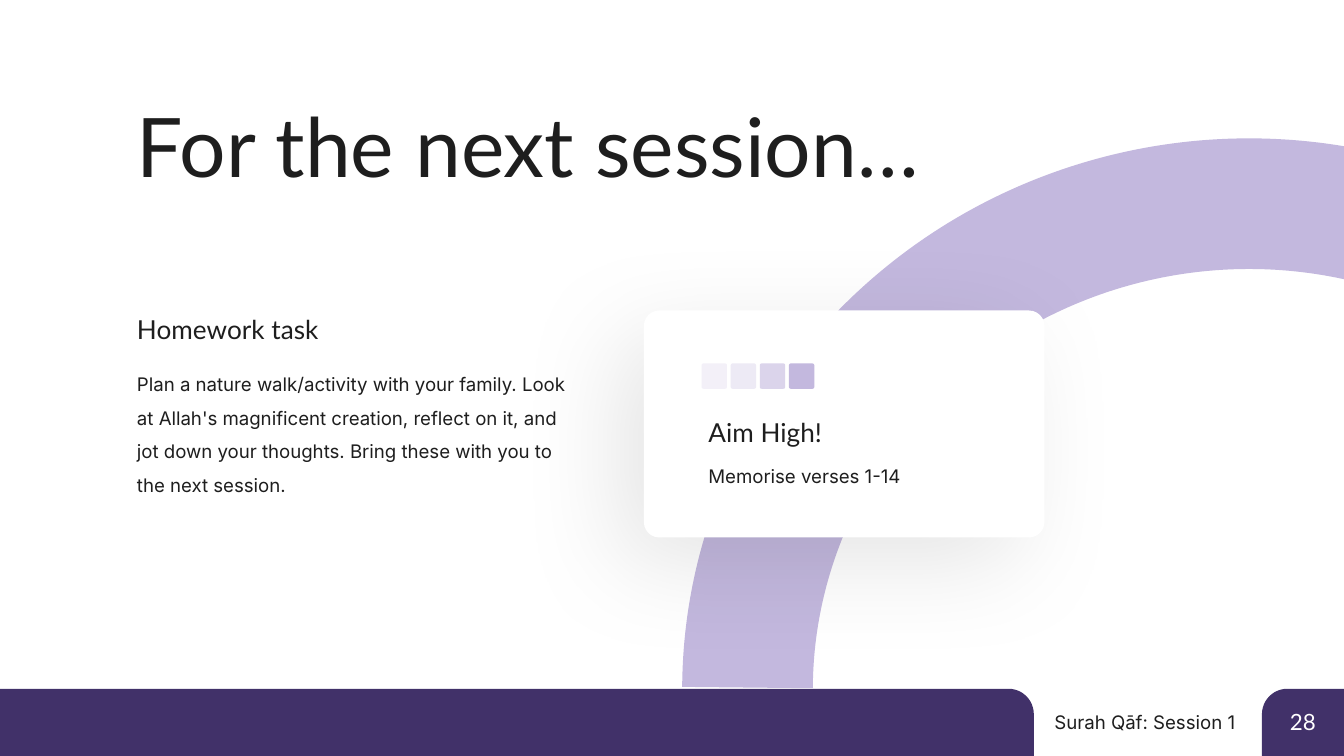
from lxml.etree import SubElement
from pptx import Presentation
from pptx.dml.color import RGBColor
from pptx.enum.shapes import MSO_SHAPE as SHAPE
from pptx.enum.text import MSO_AUTO_SIZE as AUTO, PP_ALIGN as ALIGN
from pptx.oxml.ns import qn
from pptx.util import Cm, Pt

COLORS = {
    "ink": "1E1E1E",
    "white": "FFFFFF",
    "purple": "413169",
    "lilac": "C3B8DE",
    "shadow": "000000",
}
BAR_TOP, BAR_HEIGHT = 13.02, 1.27
LEFT, CARD_LEFT = 2.46, 13.26
SWATCH_SIZE, SWATCH_STEP = 0.48, 0.55


def rgb(name):
    return RGBColor.from_string(COLORS[name])


def add_block(shapes, kind, box, adj, color, alpha=100):
    sp = shapes.add_shape(kind, *map(Cm, box))
    sp.adjustments[0] = adj
    sp.shadow.inherit = False
    sp.fill.solid()
    sp.fill.fore_color.rgb = rgb(color)
    sp.line.fill.background()
    if alpha < 100:
        clr = sp.element.spPr.find(qn("a:solidFill"))[0]
        SubElement(clr, qn("a:alpha"), val=str(alpha * 1000))
    return sp


def add_text(shapes, box, text, size, font="Inter", color="ink",
             align=ALIGN.LEFT, spacing=None):
    tf = shapes.add_textbox(*map(Cm, box)).text_frame
    tf.word_wrap = True
    tf.auto_size = AUTO.SHAPE_TO_FIT_TEXT
    tf.margin_left = tf.margin_right = Cm(0.13)
    tf.margin_top = tf.margin_bottom = Cm(0.06)
    p = tf.paragraphs[0]
    p.text = text
    p.alignment = align
    p.line_spacing = spacing
    p.font.size = Pt(size)
    p.font.name = font
    p.font.color.rgb = rgb(color)


def add_arc(shapes):
    sp = shapes.add_shape(SHAPE.ARC, Cm(14.12), Cm(3.86), Cm(18.77), Cm(18.16))
    sp.adjustments[0] = 113.67
    sp.adjustments[1] = 6.76
    sp.rotation = 350.2
    sp.shadow.inherit = False
    sp.fill.background()
    sp.line.color.rgb = rgb("lilac")
    sp.line.width = Pt(70)


def add_soft_shadow(sp):
    effects = sp.element.spPr.find(qn("a:effectLst"))
    shadow = SubElement(effects, qn("a:outerShdw"), blurRad=str(Pt(55.9)),
                        dist=str(Pt(20)), dir=str(135 * 60000),
                        algn="tr", rotWithShape="0")
    clr = SubElement(shadow, qn("a:srgbClr"), val=COLORS["shadow"])
    SubElement(clr, qn("a:alpha"), val="9000")


def add_footer(shapes):
    tab = add_block(shapes, SHAPE.ROUND_1_RECTANGLE,
                    (23.85, BAR_TOP, 1.55, BAR_HEIGHT), 0.379, "purple")
    tab.element.spPr.find(qn("a:xfrm")).set("flipH", "1")
    add_text(shapes, (18.87, 13.38, 4.6, 0.56), "Surah Qāf: Session 1", 10,
             align=ALIGN.RIGHT)
    add_text(shapes, (24.25, 13.33, 0.77, 0.64), "28", 12, "Lato", "white")
    add_block(shapes, SHAPE.ROUND_1_RECTANGLE,
              (0, BAR_TOP, 19.54, BAR_HEIGHT), 0.379, "purple")


def add_swatches(shapes):
    group = shapes.add_group_shape()
    for i, alpha in enumerate((20, 29, 60, 100)):
        box = (CARD_LEFT + i * SWATCH_STEP, 6.87, SWATCH_SIZE, SWATCH_SIZE)
        add_block(group.shapes, SHAPE.ROUNDED_RECTANGLE, box, 0.075,
                  "lilac", alpha)


def main():
    prs = Presentation()
    prs.slide_width, prs.slide_height = Cm(25.4), Cm(14.29)
    s = prs.slides.add_slide(prs.slide_layouts[6])
    shapes = s.shapes

    add_footer(shapes)
    add_arc(shapes)
    card = add_block(shapes, SHAPE.ROUNDED_RECTANGLE,
                     (12.17, 5.87, 7.57, 4.29), 0.068, "white")
    add_soft_shadow(card)

    add_text(shapes, (LEFT, 1.75, 20.32, 2.01), "For the next session…",
             44, "Lato")
    add_text(shapes, (LEFT, 5.87, 8.59, 0.74), "Homework task", 14, "Lato")
    add_text(shapes, (LEFT, 6.78, 8.64, 2.49),
             "Plan a nature walk/activity with your family. Look at Allah's "
             "magnificent creation, reflect on it, and jot down your thoughts. "
             "Bring these with you to the next session.", 10, spacing=1.5)

    add_swatches(shapes)
    add_text(shapes, (CARD_LEFT, 7.82, 5.05, 0.74), "Aim High!", 14, "Lato")
    add_text(shapes, (CARD_LEFT, 8.51, 5.59, 0.56), "Memorise verses 1-14",
             10, spacing=1.5)
    prs.save("out.pptx")


if __name__ == "__main__":
    main()
